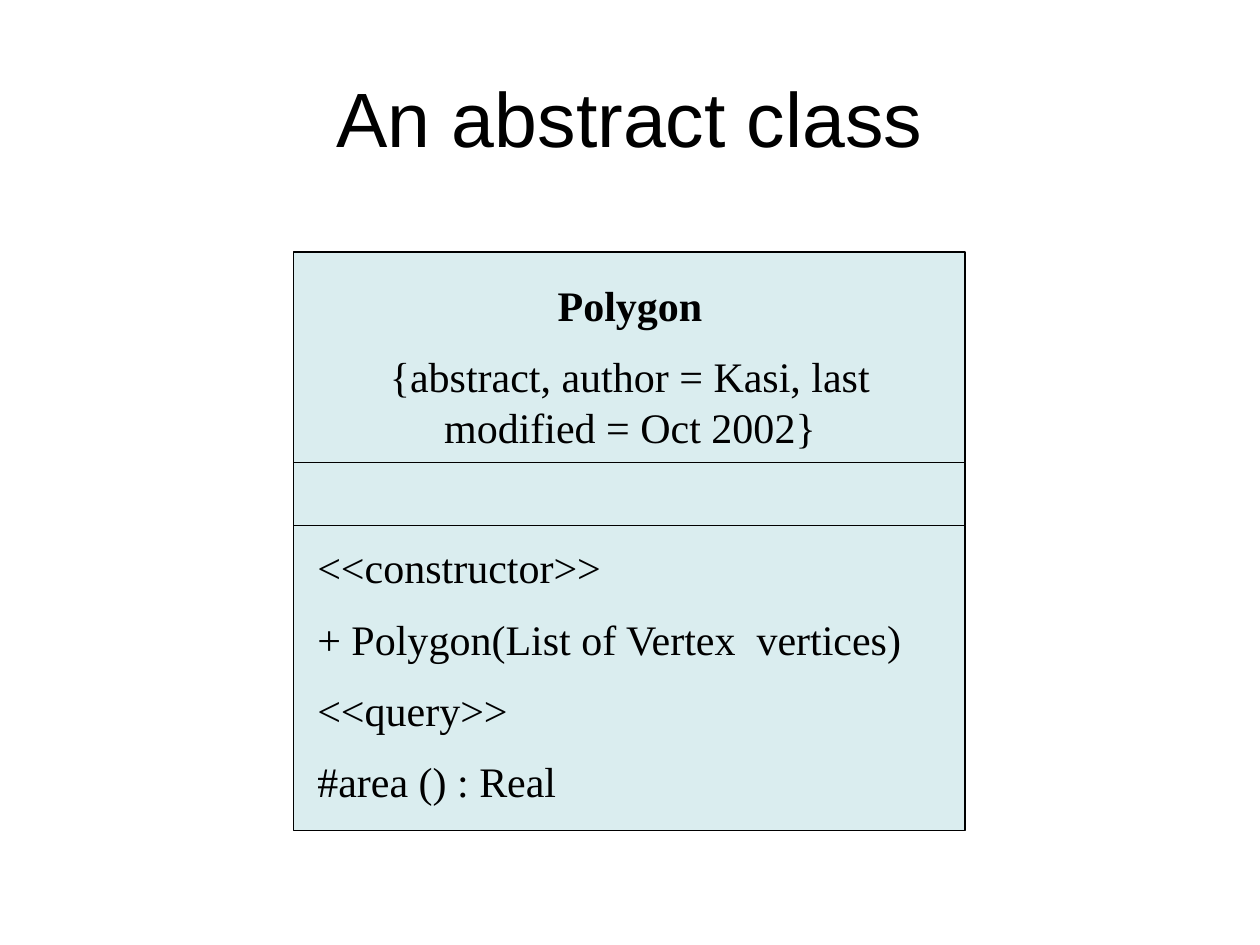
from pptx import Presentation
from pptx.dml.color import RGBColor
from pptx.enum.shapes import MSO_SHAPE
from pptx.enum.text import MSO_ANCHOR, PP_ALIGN
from pptx.util import Inches, Pt

RECTANGLE = MSO_SHAPE.RECTANGLE
TOP, MIDDLE = MSO_ANCHOR.TOP, MSO_ANCHOR.MIDDLE
LEFT, CENTER = PP_ALIGN.LEFT, PP_ALIGN.CENTER

# Content
TITLE = "An abstract class"
CLASS_HEADER = ["Polygon", "{abstract, author = Kasi, last modified = Oct 2002}"]
OPERATIONS = [
    "<<constructor>>",
    "+ Polygon(List of Vertex  vertices)",
    "<<query>>",
    "#area () : Real",
]

# Style and class box geometry, in inches
COLORS = {"text": "000000", "line": "000000", "fill": "DAEDEF"}
BOX_LEFT, BOX_TOP, BOX_WIDTH = 2.33, 2, 5.33
COMPARTMENT_HEIGHTS = [1.67, 0.5, 2.42]  # header, attributes, operations


def color(name):
    return RGBColor.from_string(COLORS[name])


def add_rectangle(slide, left, top, width, height, outlined=True):
    box = slide.shapes.add_shape(
        RECTANGLE, Inches(left), Inches(top), Inches(width), Inches(height))
    box.shadow.inherit = False
    box.fill.solid()
    box.fill.fore_color.rgb = color("fill")
    if outlined:
        box.line.color.rgb = color("line")
        box.line.width = Pt(0.75)
    else:
        box.line.fill.background()
    return box


def add_text_box(slide, left, top, width, height):
    return slide.shapes.add_textbox(
        Inches(left), Inches(top), Inches(width), Inches(height))


def write(box, lines, font, size, align, anchor=TOP):
    frame = box.text_frame
    frame.word_wrap = True
    frame.vertical_anchor = anchor
    frame.text = "\n".join(lines)
    for index, para in enumerate(frame.paragraphs):
        para.alignment = align
        para.space_before = Pt(size / 2 if index else 0)
        for span in para.runs:
            span.font.name = font
            span.font.size = Pt(size)
            span.font.color.rgb = color("text")


def main():
    deck = Presentation()
    deck.slide_width, deck.slide_height = Inches(10), Inches(7.5)
    slide = deck.slides.add_slide(deck.slide_layouts[6])

    # Title
    title = add_text_box(slide, 0.5, 0.3, 9, 1.25)
    write(title, [TITLE], "Arial", 44, CENTER, MIDDLE)

    # Stacked compartments of the class box
    top = BOX_TOP
    for height in COMPARTMENT_HEIGHTS:
        add_rectangle(slide, BOX_LEFT, top, BOX_WIDTH, height)
        top += height

    # Class name and properties
    header = add_text_box(slide, 2.5, 2.17, 5, 1.5)
    write(header, CLASS_HEADER, "Times New Roman", 24, CENTER)
    header.text_frame.paragraphs[0].runs[0].font.bold = True

    # Operations
    operations = add_rectangle(slide, 2.42, 4.25, 5.08, 2.32, outlined=False)
    write(operations, OPERATIONS, "Times New Roman", 24, LEFT)

    deck.save("out.pptx")


if __name__ == "__main__":
    main()
